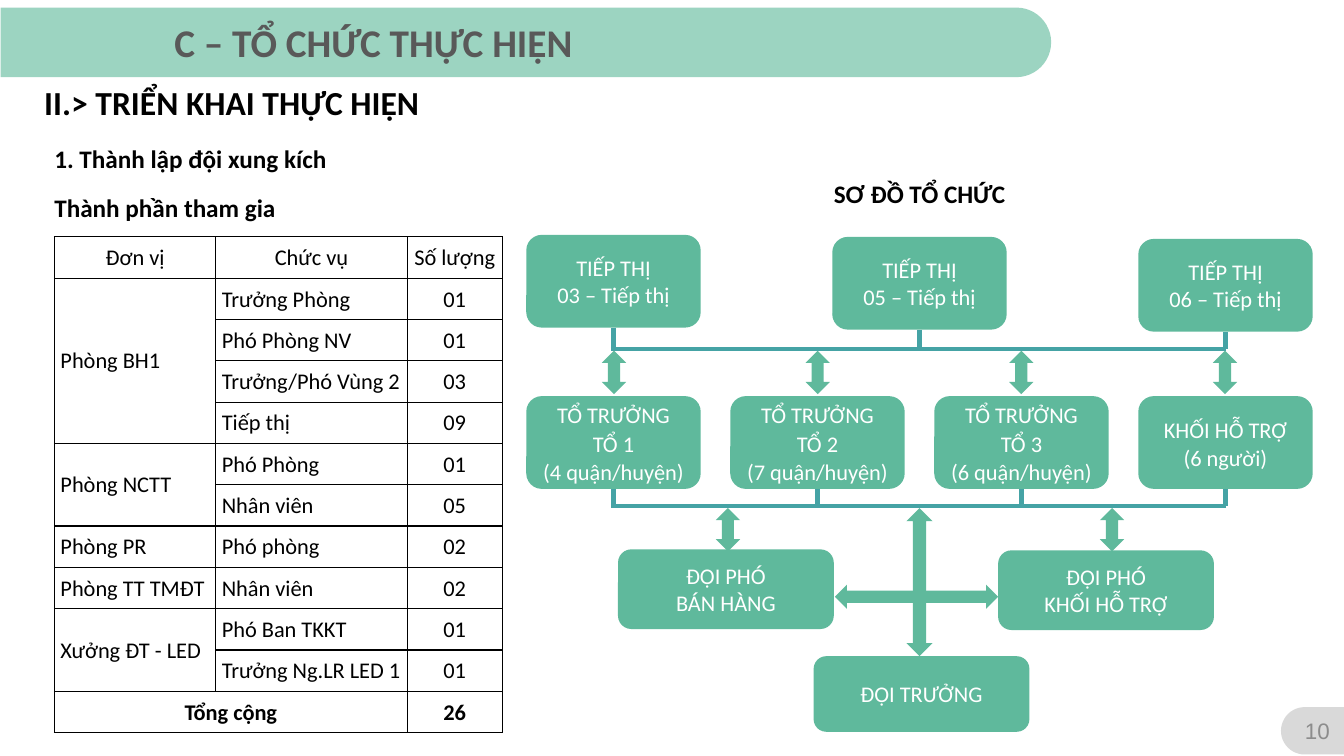
from lxml import etree
from pptx import Presentation
from pptx.dml.color import RGBColor
from pptx.enum.shapes import MSO_CONNECTOR, MSO_SHAPE
from pptx.enum.text import MSO_ANCHOR, PP_ALIGN
from pptx.oxml.ns import qn
from pptx.util import Inches, Pt

LEFT, CENTER = PP_ALIGN.LEFT, PP_ALIGN.CENTER
TOP, MIDDLE = MSO_ANCHOR.TOP, MSO_ANCHOR.MIDDLE
ROUND_RECT, BAR = MSO_SHAPE.ROUNDED_RECTANGLE, MSO_SHAPE.ROUND_2_SAME_RECTANGLE
ARROW, STRAIGHT = MSO_SHAPE.UP_DOWN_ARROW, MSO_CONNECTOR.STRAIGHT

BLACK = RGBColor(0x00, 0x00, 0x00)
WHITE = RGBColor(0xFF, 0xFF, 0xFF)
MINT = RGBColor(0x9C, 0xD4, 0xC1)
GREEN = RGBColor(0x5F, 0xB9, 0x9C)
TEAL = RGBColor(0x45, 0xA3, 0xA5)
PALE_GRAY = RGBColor(0xD9, 0xD9, 0xD9)
MID_GRAY = RGBColor(0x8C, 0x8C, 0x8C)
DARK_GRAY = RGBColor(0x59, 0x59, 0x59)

# Content: (text, box, format)
TITLE = "SƠ ĐỒ TỔ CHỨC"
BOLD_18 = dict(size=18, bold=True, anchor=MIDDLE)
HEADINGS = [
    ("C – TỔ CHỨC THỰC HIỆN", (1.63, 0.13, 8.08, 0.57),
     dict(size=28, bold=True, color=DARK_GRAY)),
    ("II.> TRIỂN KHAI THỰC HIỆN", (0.34, 0.76, 8.08, 0.5), dict(size=24, bold=True)),
    ("1. Thành lập đội xung kích", (0.44, 1.37, 10.25, 0.4), BOLD_18),
    ("Thành phần tham gia", (0.44, 1.86, 2.79, 0.4), BOLD_18),
    ("10", (12.82, 7.05, 0.49, 0.4),
     dict(font="Arial", color=MID_GRAY, align=CENTER, anchor=MIDDLE)),
]

HEADER = ("Đơn vị", "Chức vụ", "Số lượng")
UNITS = [
    ("Phòng BH1", [("Trưởng Phòng", "01"), ("Phó Phòng NV", "01"),
                   ("Trưởng/Phó Vùng 2", "03"), ("Tiếp thị", "09")]),
    ("Phòng NCTT", [("Phó Phòng", "01"), ("Nhân viên", "05")]),
    ("Phòng PR", [("Phó phòng", "02")]),
    ("Phòng TT TMĐT", [("Nhân viên", "02")]),
    ("Xưởng ĐT - LED", [("Phó Ban TKKT", "01"), ("Trưởng Ng.LR LED 1", "01")]),
]
TOTAL = ("Tổng cộng", "26")
COL_WIDTHS, ROW_HEIGHT = (1.6, 1.9, 0.94), 0.41

MARKETING = ["TIẾP THỊ\n03 – Tiếp thị", "TIẾP THỊ\n05 – Tiếp thị",
             "TIẾP THỊ\n06 – Tiếp thị"]
TEAMS = ["TỔ TRƯỞNG\nTỔ 1\n(4 quận/huyện)", "TỔ TRƯỞNG\nTỔ 2\n(7 quận/huyện)",
         "TỔ TRƯỞNG\nTỔ 3\n(6 quận/huyện)", "KHỐI HỖ TRỢ\n(6 người)"]
LEADERS = [("ĐỘI PHÓ\nBÁN HÀNG", (6.13, 5.45, 2.14, 0.79)),
           ("ĐỘI PHÓ\nKHỐI HỖ TRỢ", (9.9, 5.46, 2.14, 0.79)),
           ("ĐỘI TRƯỞNG", (8.07, 6.51, 2.14, 0.75))]

# Chart geometry
CHART_LEFT, CHART_SPAN = 5.22, 6.07
BOX_W, BOX_H = 1.73, 0.92
BUS_LEFT, BUS_RIGHT = 6.06, 12.16
UPPER_BUS, LOWER_BUS = 3.46, 5.02
ARROW_W, ARROW_H = 0.24, 0.43

prs = Presentation()
prs.slide_width, prs.slide_height = Inches(13.33), Inches(7.5)
s = prs.slides.add_slide(prs.slide_layouts[5])


def inches(box):
    return [Inches(v) for v in box]


def write(tf, text, size=16, bold=False, color=BLACK, font="Calibri",
          align=LEFT, anchor=TOP, spacing=None):
    tf.word_wrap = True
    tf.vertical_anchor = anchor
    for i, line in enumerate(text.split("\n")):
        p = tf.paragraphs[0] if i == 0 else tf.add_paragraph()
        p.alignment = align
        if spacing:
            p.line_spacing = Pt(spacing)
        r = p.add_run()
        r.text = line
        r.font.size, r.font.bold, r.font.name = Pt(size), bold, font
        r.font.color.rgb = color


def add_filled(kind, box, fill, rotation=0):
    sp = s.shapes.add_shape(kind, *inches(box))
    sp.shadow.inherit = False
    sp.fill.solid()
    sp.fill.fore_color.rgb = fill
    sp.line.fill.background()
    sp.rotation = rotation
    return sp


def add_box(text, box, spacing=None):
    sp = add_filled(ROUND_RECT, box, GREEN)
    tf = sp.text_frame
    tf.margin_left = tf.margin_right = tf.margin_top = tf.margin_bottom = 0
    write(tf, text, color=WHITE, align=CENTER, anchor=MIDDLE, spacing=spacing)
    return sp


def add_line(x1, y1, x2, y2):
    line = s.shapes.add_connector(STRAIGHT, *inches((x1, y1, x2, y2)))
    line.line.color.rgb = TEAL
    line.line.width = Pt(3)
    etree.SubElement(line._element.spPr, qn("a:effectLst"))
    return line


def add_tier(texts, top, rise, bus, spacing=None):
    """A row of boxes, each dropping a short line to a shared bus."""
    step = CHART_SPAN / (len(texts) - 1)
    for i, text in enumerate(texts):
        x, y = CHART_LEFT + i * step, top + i * rise
        sp = add_box(text, (x, y, BOX_W, BOX_H), spacing)
        mid = x + BOX_W / 2
        add_line(mid, y + BOX_H, mid, bus).begin_connect(sp, 2)
    add_line(BUS_LEFT, bus, BUS_RIGHT, bus)


def set_cell(cell, text, **fmt):
    cell.margin_left = Inches(0.06 if fmt.get("align", LEFT) == LEFT else 0.01)
    cell.margin_right = cell.margin_top = Inches(0.01)
    cell.margin_bottom = 0
    write(cell.text_frame, text, **fmt)
    cell.vertical_anchor = MIDDLE


def style_cell(cell):
    cell.fill.solid()
    cell.fill.fore_color.rgb = WHITE
    tc_pr = cell._tc.get_or_add_tcPr()
    for i, side in enumerate(("lnL", "lnR", "lnT", "lnB")):
        ln = etree.Element(qn("a:" + side), w=str(Pt(1)))
        fill = etree.SubElement(ln, qn("a:solidFill"))
        etree.SubElement(fill, qn("a:srgbClr"), val=str(BLACK))
        tc_pr.insert(i, ln)


# Title bar and page number tab
for box, fill, rotation in [((4.87, -4.79, 0.69, 10.42), MINT, 90),
                            ((12.79, 6.93, 0.47, 0.64), PALE_GRAY, 270)]:
    bar = add_filled(BAR, box, fill, rotation)
    bar.adjustments[0] = 0.5

# Title and headings
title = s.shapes.title
title.left, title.top, title.width, title.height = inches((8.06, 1.72, 2.12, 0.4))
write(title.text_frame, TITLE, align=CENTER, **BOLD_18)
for text, box, fmt in HEADINGS:
    write(s.shapes.add_textbox(*inches(box)).text_frame, text, **fmt)

# Organisation chart
add_tier(MARKETING, 2.33, 0.02, UPPER_BUS)
add_tier(TEAMS, 3.93, 0, LOWER_BUS, spacing=20)
for text, box in LEADERS:
    add_box(text, box)

# Double arrows
team_arrows = [(5.97 + i * 2.02, 3.48) for i in range(len(TEAMS))]
for x, y in team_arrows + [(7.1, 5.04), (10.91, 5.04)]:
    add_filled(ARROW, (x, y, ARROW_W, ARROW_H), GREEN)
add_filled(ARROW, (8.97, 5.11, ARROW_W, 1.62), GREEN, rotation=270)
add_filled(ARROW, (8.99, 5.04, 0.26, 1.47), GREEN)

# Table of participants
n_rows = 2 + sum(len(posts) for _, posts in UNITS)
table = s.shapes.add_table(n_rows, len(HEADER), *inches(
    (0.54, 2.35, sum(COL_WIDTHS), n_rows * ROW_HEIGHT))).table
for col, width in zip(table.columns, COL_WIDTHS):
    col.width = Inches(width)
for row in table.rows:
    row.height = Inches(ROW_HEIGHT)
for cell in table.iter_cells():
    style_cell(cell)

for c, text in enumerate(HEADER):
    set_cell(table.cell(0, c), text, align=CENTER)
top = 1
for unit, posts in UNITS:
    set_cell(table.cell(top, 0), unit)
    if len(posts) > 1:
        table.cell(top, 0).merge(table.cell(top + len(posts) - 1, 0))
    for r, (post, count) in enumerate(posts, top):
        set_cell(table.cell(r, 1), post)
        set_cell(table.cell(r, 2), count, align=CENTER)
    top += len(posts)
table.cell(top, 0).merge(table.cell(top, 1))
for c, text in zip((0, 2), TOTAL):
    set_cell(table.cell(top, c), text, bold=True, align=CENTER)

prs.save("out.pptx")
